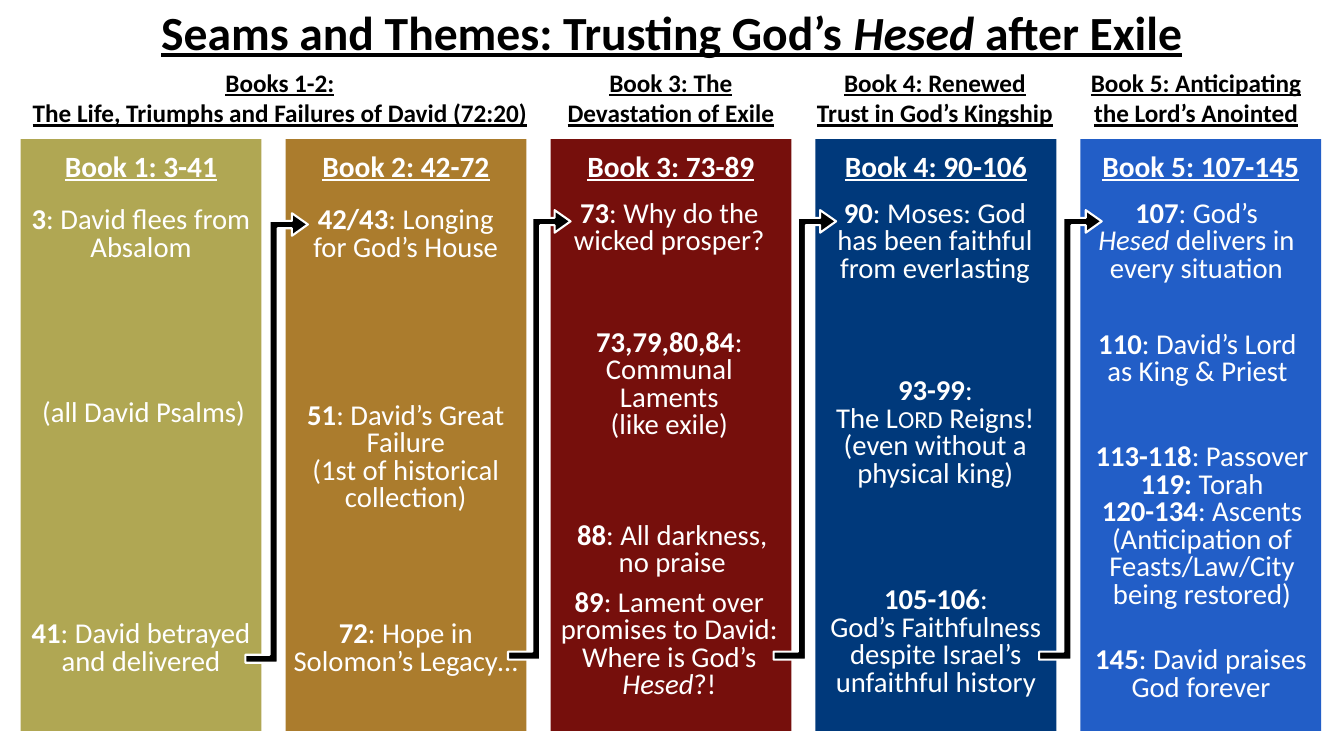
from dataclasses import dataclass

from pptx import Presentation
from pptx.dml.color import RGBColor
from pptx.enum import shapes, text
from pptx.util import Pt

COLORS = {
    "olive": "B0A753", "ochre": "AB7C2D", "maroon": "760F0C",
    "navy": "00397B", "blue": "225EC7", "black": "000000", "white": "FFFFFF",
}
FONT = "Calibri"
INSET = 5.76
COL_LEFT, COL_PITCH, COL_W = 29.5, 378.5, 344
COL_TOP, COL_H = 198.7, 845.3
NOTE_W, NOTE_SIZE, SMALL_CAP_SIZE = 335.5, 41, 35
ARROW_OUTLINE = [
    (66.5, 0), (89.3, 16), (66.5, 32.2), (66.5, 21.5), (46, 21.5), (46, 642.2),
    (0, 642.2), (0, 630.8), (34.6, 630.8), (34.6, 11), (66.5, 11),
]


@dataclass
class Theme:
    left: float
    width: float
    text: str


@dataclass
class Note:
    dx: float  # offset from the left edge of the column
    top: float
    height: float
    text: str


@dataclass
class Book:
    heading: str
    heading_w: float
    color: str
    notes: list[Note]


THEMES = [
    Theme(36.7, 726.5, "Books 1-2:\nThe Life, Triumphs and Failures of David (72:20)"),
    Theme(790.6, 335.5, "Book 3: The Devastation of Exile"),
    Theme(1159.2, 352.8, "Book 4: Renewed Trust in God’s Kingship"),
    Theme(1532.2, 352.8, "Book 5: Anticipating the Lord’s Anointed"),
]

# Markup: *bold*, _italic_, ~small capitals~; \n new paragraph, \v line break
BOOKS = [
    Book("Book 1: 3-41", 281.5, "olive", [
        Note(4.3, 290.9, 108.7, "*3*: David flees from Absalom"),
        Note(8, 565.9, 70.6, "(all David Psalms)"),
        Note(4.3, 882.7, 108.7, "*41*: David betrayed and delivered"),
    ]),
    Book("Book 2: 42-72", 281.5, "ochre", [
        Note(4, 290.9, 108.7, "*42/43*: Longing\nfor God’s House"),
        Note(4, 570.2, 185.8,
             "*51*: David’s Great Failure\v(1st of historical collection)"),
        Note(4, 882.7, 108.7, "*72*: Hope in Solomon’s Legacy…"),
    ]),
    Book("Book 3: 73-89", 281.5, "maroon", [
        Note(2, 281.5, 108.7, "*73*: Why do the wicked prosper?"),
        Note(2, 465.8, 201.6, "*73,79,80,84*: Communal Laments\v(like exile)"),
        Note(6.2, 741.6, 101.5, "*88*: All darkness, no praise"),
        Note(2, 837.4, 178.6,
             "*89*: Lament over promises to David:\nWhere is God’s _Hesed_?!"),
    ]),
    Book("Book 4: 90-106", 317, "navy", [
        Note(3, 281.5, 142.6, "*90*: Moses: God has been faithful from everlasting"),
        Note(3.5, 535, 185.8,
             "*93-99*:\nThe L~ORD~ Reigns!\n(even without a physical king)"),
        Note(4.3, 833.8, 185.8,
             "*105-106*:\nGod’s Faithfulness despite Israel’s unfaithful history"),
    ]),
    Book("Book 5: 107-145", 334, "blue", [
        Note(-2, 281.5, 142.6, "*107*: God’s\n_Hesed_ delivers in every situation"),
        Note(-0.5, 468.7, 101.5, "*110*: David’s Lord as King & Priest"),
        Note(6, 629.3, 258.5,
             "*113-118*: Passover\n*119:* Torah\n*120-134*: Ascents\n"
             "(Anticipation of Feasts/Law/City being restored)"),
        Note(4.5, 919.4, 101.5, "*145*: David praises God forever"),
    ]),
]
ARROWS = [(350.6, 304.6), (725.8, 300.2), (1105.2, 300.2), (1484.6, 300.2)]


def rgb(name: str) -> RGBColor:
    return RGBColor.from_string(COLORS[name])


def write(tf, content: str, *, size: float, color: str = "black", bold: bool = False,
          underline: bool = False, spacing: float = 1.0) -> None:
    """Fill a text frame, turning the markup into formatted runs."""
    tf.word_wrap = True
    tf.auto_size = text.MSO_AUTO_SIZE.NONE
    tf.vertical_anchor = text.MSO_ANCHOR.TOP
    tf.margin_left = tf.margin_right = tf.margin_top = tf.margin_bottom = Pt(INSET)
    for i, line in enumerate(content.split("\n")):
        p = tf.add_paragraph() if i else tf.paragraphs[0]
        p.alignment = text.PP_ALIGN.CENTER
        p.line_spacing = spacing
        on = {"*": bold, "_": False, "~": False}
        buffer = ""
        for ch in line + "\0":
            if ch not in on and ch not in "\v\0":
                buffer += ch
                continue
            if buffer:
                r = p.add_run()
                r.text = buffer
                r.font.name = FONT
                r.font.size = Pt(SMALL_CAP_SIZE if on["~"] else size)
                r.font.bold, r.font.italic = on["*"], on["_"]
                r.font.underline = underline
                r.font.color.rgb = rgb(color)
                buffer = ""
            if ch in on:
                on[ch] = not on[ch]
            elif ch == "\v":
                p.add_line_break()


def add_text(parent, left: float, top: float, width: float, height: float,
             content: str, **fmt) -> None:
    sp = parent.add_textbox(Pt(left), Pt(top), Pt(width), Pt(height))
    write(sp.text_frame, content, **fmt)


def draw_book(slide, book: Book, left: float) -> None:
    grp = slide.shapes.add_group_shape()
    sp = grp.shapes.add_shape(shapes.MSO_SHAPE.RECTANGLE,
                              Pt(left), Pt(COL_TOP), Pt(COL_W), Pt(COL_H))
    sp.shadow.inherit = False
    sp.fill.solid()
    sp.fill.fore_color.rgb = rgb(book.color)
    sp.line.fill.background()
    add_text(grp.shapes, left + (COL_W - book.heading_w) / 2, 205.2, book.heading_w, 73.4,
             book.heading, size=42, color="white", bold=True, underline=True)


def draw_arrow(slide, left: float, top: float) -> None:
    points = [(Pt(left + x), Pt(top + y)) for x, y in ARROW_OUTLINE]
    builder = slide.shapes.build_freeform(*points[0])
    builder.add_line_segments(points[1:], close=True)
    sp = builder.convert_to_shape()
    sp.shadow.inherit = False
    sp.fill.solid()
    sp.fill.fore_color.rgb = rgb("black")
    sp.line.color.rgb = rgb("white")
    sp.line.width = Pt(3)


def main() -> None:
    prs = Presentation()
    prs.slide_width, prs.slide_height = Pt(1920), Pt(1080)
    slide = prs.slides.add_slide(prs.slide_layouts[5])

    # Title
    title = slide.shapes.title
    title.left, title.top, title.width, title.height = Pt(98.6), Pt(-2), Pt(1722), Pt(101.5)
    write(title.text_frame, "Seams and Themes: Trusting God’s _Hesed_ after Exile",
          size=68, bold=True, underline=True)

    # Coloured columns, then the themes above them
    lefts = [COL_LEFT + i * COL_PITCH for i in range(len(BOOKS))]
    for book, left in zip(BOOKS, lefts):
        draw_book(slide, book, left)
    for theme in THEMES:
        add_text(slide.shapes, theme.left, 90.7, theme.width, 101.5, theme.text,
                 size=36, bold=True, underline=True)

    # Notes, each column followed by the arrow to the next one
    for i, (book, left) in enumerate(zip(BOOKS, lefts)):
        for note in book.notes:
            add_text(slide.shapes, left + note.dx, note.top, NOTE_W, note.height, note.text,
                     size=NOTE_SIZE, color="white", spacing=0.8)
        if i < len(ARROWS):
            draw_arrow(slide, *ARROWS[i])

    prs.save("out.pptx")


if __name__ == "__main__":
    main()
